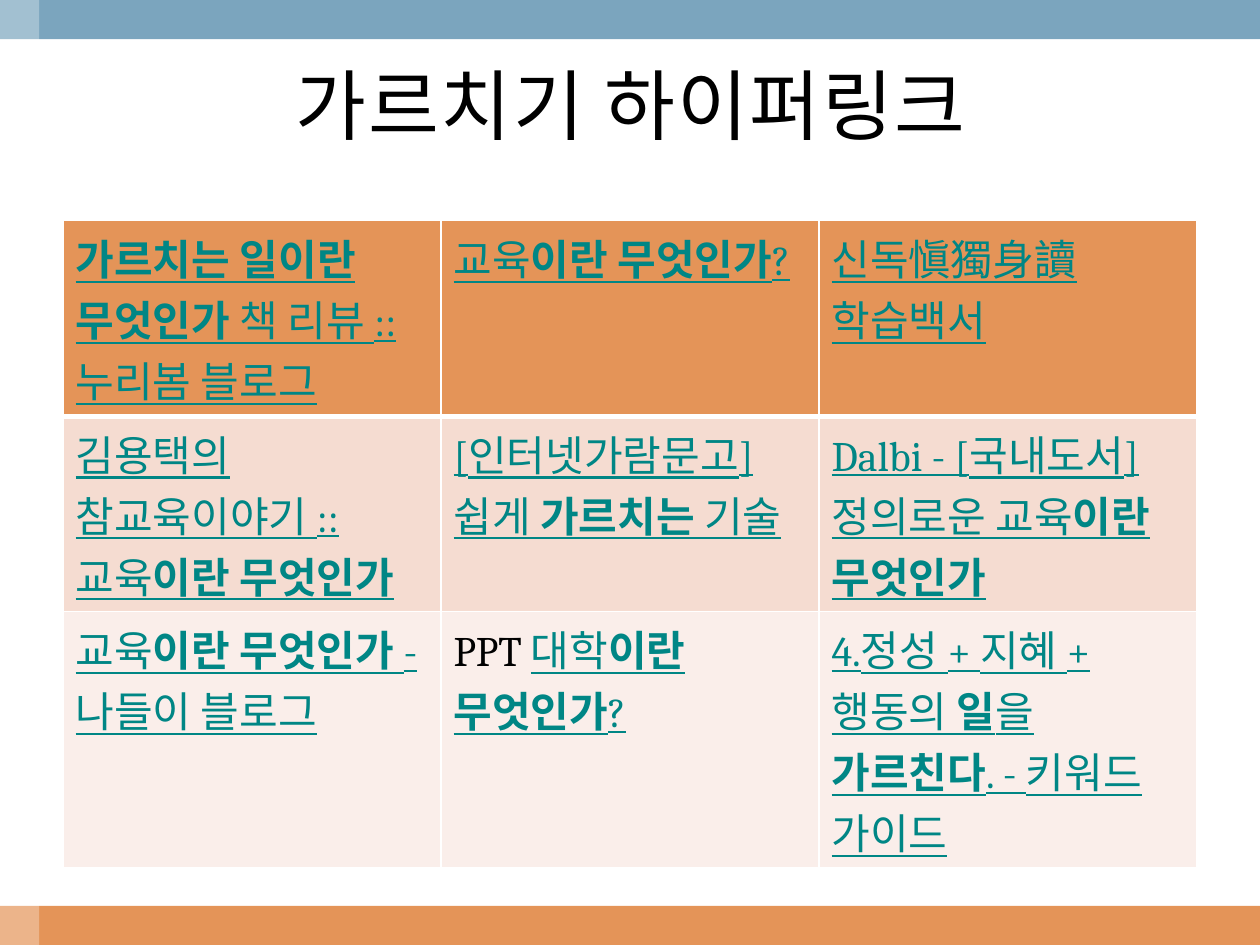
from typing import NamedTuple

from lxml.etree import SubElement
from pptx import Presentation
from pptx.dml.color import RGBColor
from pptx.enum.shapes import MSO_SHAPE as Shape
from pptx.enum.text import MSO_ANCHOR as Anchor, PP_ALIGN as Align
from pptx.oxml.ns import qn
from pptx.util import Cm, Pt

FONT = "Cambria"
COLORS = {
    "orange": "E49458", "blue": "7BA5BE", "white": "FFFFFF", "black": "000000",
    "link": "008685", "row_dark": "F5DCD1", "row_light": "FAEEEA",
}


class Band(NamedTuple):
    left: float
    top: float
    width: float
    height: float
    color: str
    alpha: int = 100


class Part(NamedTuple):
    text: str
    bold: bool = False
    color: str = "link"


class Row(NamedTuple):
    height: float
    fill: str
    bottom_line: float
    cells: list[list[Part]]


WIDTH, HEIGHT, BAND = 25.4, 19.05, 0.79
BANDS = [
    Band(0, HEIGHT - BAND, WIDTH, BAND, "orange"),
    Band(0, 0, WIDTH, BAND, "blue"),
    Band(0, 0, BAND, HEIGHT, "white", 30),
]
WHAT_IS = Part("이란 무엇인가", True)
ROWS = [
    Row(3.94, "orange", 3, [
        [Part("가르치는 일이란 무엇인가", True), Part(" 책 리뷰 :: 누리봄 블로그")],
        [Part("교육"), WHAT_IS, Part("?")],
        [Part("신독愼獨身讀학습백서")],
    ]),
    Row(3.94, "row_dark", 1, [
        [Part("김용택의 참교육이야기 :: 교육"), WHAT_IS],
        [Part("[인터넷가람문고] 쉽게 "), Part("가르치는", True), Part(" 기술")],
        [Part("Dalbi - [국내도서]정의로운 교육"), WHAT_IS],
    ]),
    Row(5.15, "row_light", 1, [
        [Part("교육"), WHAT_IS, Part(" - 나들이 블로그")],
        [Part("PPT ", color="black"), Part("대학"), WHAT_IS, Part("?")],
        [Part("4.정성 + 지혜 + 행동의 "), Part("일", True), Part("을 "),
         Part("가르친다", True), Part(". - 키워드 가이드")],
    ]),
]


def rgb(name: str) -> RGBColor:
    return RGBColor.from_string(COLORS[name])


def draw_band(slide, band: Band) -> None:
    bar = slide.shapes.add_shape(
        Shape.RECTANGLE, *map(Cm, (band.left, band.top, band.width, band.height)))
    bar.shadow.inherit = False
    bar.line.fill.background()
    bar.fill.solid()
    bar.fill.fore_color.rgb = rgb(band.color)
    if band.alpha < 100:
        color = bar._element.spPr.find(f"{qn('a:solidFill')}/{qn('a:srgbClr')}")
        SubElement(color, qn("a:alpha"), val=str(band.alpha * 1000))


def add_run(paragraph, part: Part, size: float):
    run = paragraph.add_run()
    run.text = part.text
    run.font.name = FONT
    run.font.size = Pt(size)
    run.font.bold = part.bold
    run.font.underline = part.color == "link"
    run.font.color.rgb = rgb(part.color)
    return run


def set_borders(cell, top: float, bottom: float) -> None:
    """Draw white cell borders; call before the fill, which must follow them."""
    properties = cell._tc.get_or_add_tcPr()
    for side, points in (("L", 1), ("R", 1), ("T", top), ("B", bottom)):
        line = SubElement(properties, qn(f"a:ln{side}"), w=str(Pt(points)))
        fill = SubElement(line, qn("a:solidFill"))
        SubElement(fill, qn("a:srgbClr"), val=COLORS["white"])


def draw_title(slide, text: str) -> None:
    title = slide.shapes.title
    title.left, title.top, title.width, title.height = map(Cm, (0.84, 0.79, 23.77, 2.62))
    title.text_frame.vertical_anchor = Anchor.MIDDLE
    paragraph = title.text_frame.paragraphs[0]
    paragraph.alignment = Align.CENTER
    run = add_run(paragraph, Part(text, color="black"), 44)
    run.font._element.set("spc", "100")


def draw_links(slide, rows: list[Row]) -> None:
    table = slide.shapes.add_table(
        len(rows), len(rows[0].cells), Cm(1.27), Cm(4.45), Cm(22.86),
        Cm(sum(row.height for row in rows))).table
    table.first_row = table.horz_banding = False
    top_line = 1
    for r, row in enumerate(rows):
        table.rows[r].height = Cm(row.height)
        for c, parts in enumerate(row.cells):
            cell = table.cell(r, c)
            set_borders(cell, top_line, row.bottom_line)
            cell.fill.solid()
            cell.fill.fore_color.rgb = rgb(row.fill)
            for part in parts:
                add_run(cell.text_frame.paragraphs[0], part, 24)
        top_line = row.bottom_line


def main() -> None:
    prs = Presentation()
    prs.slide_width, prs.slide_height = Cm(WIDTH), Cm(HEIGHT)
    slide = prs.slides.add_slide(prs.slide_layouts[5])
    for band in BANDS:
        draw_band(slide, band)
    draw_links(slide, ROWS)
    draw_title(slide, "가르치기 하이퍼링크")
    prs.save("out.pptx")


if __name__ == "__main__":
    main()
